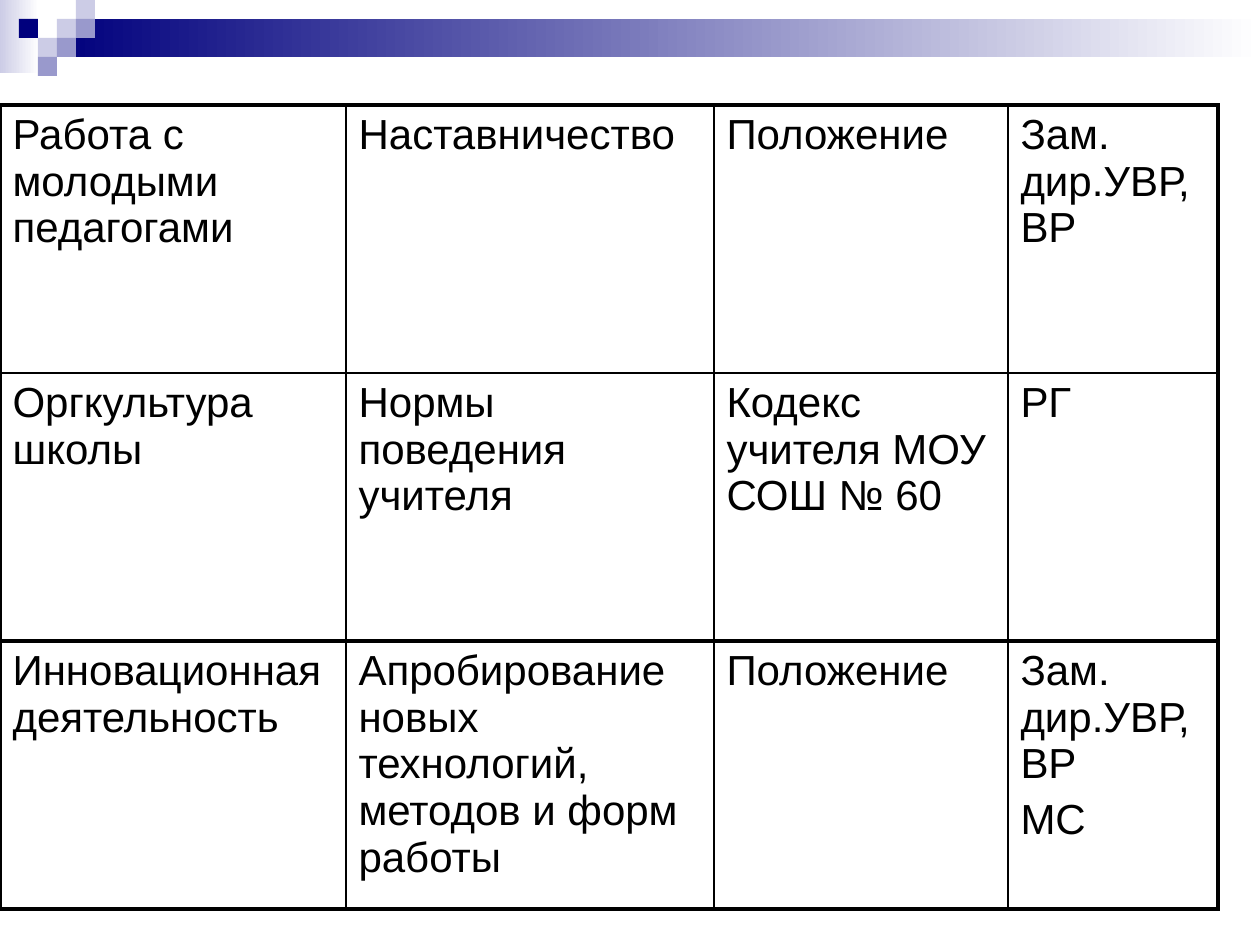
from dataclasses import dataclass

from lxml.etree import SubElement
from pptx import Presentation
from pptx.dml.color import RGBColor
from pptx.enum.shapes import MSO_SHAPE
from pptx.oxml.ns import qn
from pptx.util import Emu, Pt


@dataclass(frozen=True)
class Theme:
    navy: str = "00007D"
    periwinkle: str = "9999CC"
    lavender: str = "CCCCE6"
    white: str = "FFFFFF"
    black: str = "000000"
    font: str = "Arial"
    text_size: int = 24
    space_before: float = 4.8
    thin: float = 1
    thick: float = 2.25


EMU_PER_PX = 914400 / 126


def px(length):
    return Emu(round(length * EMU_PER_PX))


class SlideBuilder:
    def __init__(self, slide, theme):
        self.slide = slide
        self.theme = theme

    def rectangle(self, left, top, width, height, color, fade_to=None):
        shape = self.slide.shapes.add_shape(
            MSO_SHAPE.RECTANGLE, px(left), px(top), px(width), px(height))
        shape.shadow.inherit = False
        shape.line.fill.background()
        if fade_to:
            shape.fill.gradient()
            shape.fill.gradient_angle = 0
            for stop, stop_color in zip(shape.fill.gradient_stops, (color, fade_to)):
                stop.color.rgb = RGBColor.from_string(stop_color)
        else:
            shape.fill.solid()
            shape.fill.fore_color.rgb = RGBColor.from_string(color)

    def cell_text(self, cell, paragraphs):
        frame = cell.text_frame
        for index, text in enumerate(paragraphs):
            paragraph = frame.add_paragraph() if index else frame.paragraphs[0]
            paragraph.space_before = Pt(self.theme.space_before)
            run = paragraph.add_run()
            run.text = text
            run.font.name = self.theme.font
            run.font.size = Pt(self.theme.text_size)
            run.font.color.rgb = RGBColor.from_string(self.theme.black)

    def cell_borders(self, cell, widths):
        properties = cell._tc.get_or_add_tcPr()
        for position, (side, width) in enumerate(zip("LRTB", widths)):
            line = properties.makeelement(qn(f"a:ln{side}"), w=str(Pt(width)))
            fill = SubElement(line, qn("a:solidFill"))
            SubElement(fill, qn("a:srgbClr"), val=self.theme.black)
            properties.insert(position, line)

    def table(self, left, top, columns, row_height, rows, vertical, horizontal):
        """vertical and horizontal hold the width of each rule, in order."""
        table = self.slide.shapes.add_table(
            len(rows), len(columns), px(left), px(top),
            px(sum(columns)), px(row_height * len(rows))).table
        table.first_row = table.horz_banding = False
        for column, width in zip(table.columns, columns):
            column.width = px(width)
        for r, texts in enumerate(rows):
            table.rows[r].height = px(row_height)
            for c, paragraphs in enumerate(texts):
                cell = table.cell(r, c)
                cell.fill.background()
                self.cell_text(cell, paragraphs)
                self.cell_borders(cell, (*vertical[c:c + 2], *horizontal[r:r + 2]))


ROWS = [
    [["Работа с молодыми педагогами"], ["Наставничество"],
     ["Положение"], ["Зам. дир.УВР,ВР"]],
    [["Оргкультура школы"], ["Нормы поведения учителя"],
     ["Кодекс учителя МОУ СОШ № 60"], ["РГ"]],
    [["Инновационная деятельность"],
     ["Апробирование новых технологий, методов и форм работы"],
     ["Положение"], ["Зам. дир.УВР,ВР", "МС"]],
]


def main():
    theme = Theme()
    presentation = Presentation()
    presentation.slide_width, presentation.slide_height = px(1260), px(945)
    slide = presentation.slides.add_slide(presentation.slide_layouts[6])
    builder = SlideBuilder(slide, theme)

    # Fading bands at the top
    builder.rectangle(0, 0, 39, 73, theme.lavender, theme.white)
    builder.rectangle(57, 19, 1203, 38, theme.navy, theme.white)

    # Mosaic of squares on a regular grid
    square = 19
    for column, row, color in [
        (3, 1, theme.lavender), (4, 0, theme.lavender), (4, 1, theme.periwinkle),
        (2, 2, theme.lavender), (1, 1, theme.navy), (3, 2, theme.periwinkle),
        (2, 3, theme.periwinkle),
    ]:
        builder.rectangle(column * square, row * square, square, square, color)

    # Table of activities
    thin, thick = theme.thin, theme.thick
    builder.table(0, 105, [346, 368, 294, 210], 268, ROWS,
                  vertical=[thick, thin, thin, thin, thick],
                  horizontal=[thick, thin, thick, thick])

    presentation.save("out.pptx")


if __name__ == "__main__":
    main()
